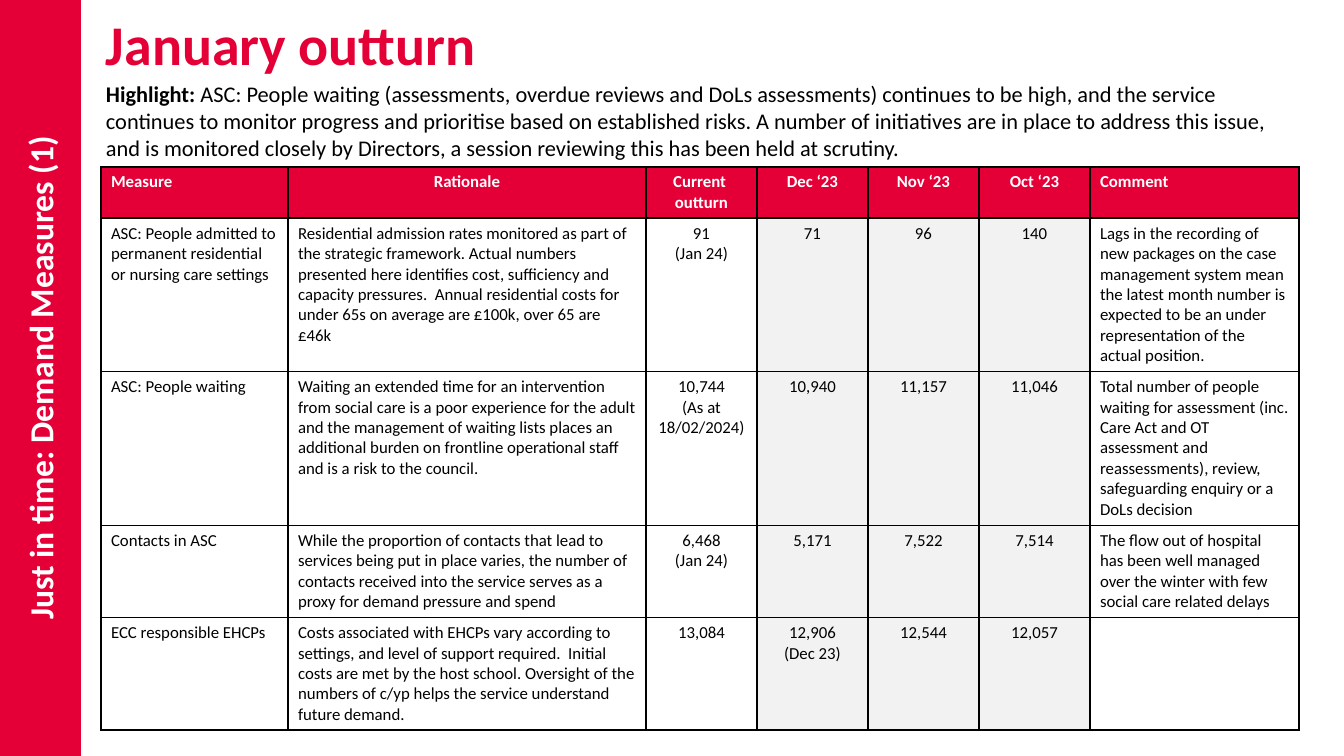
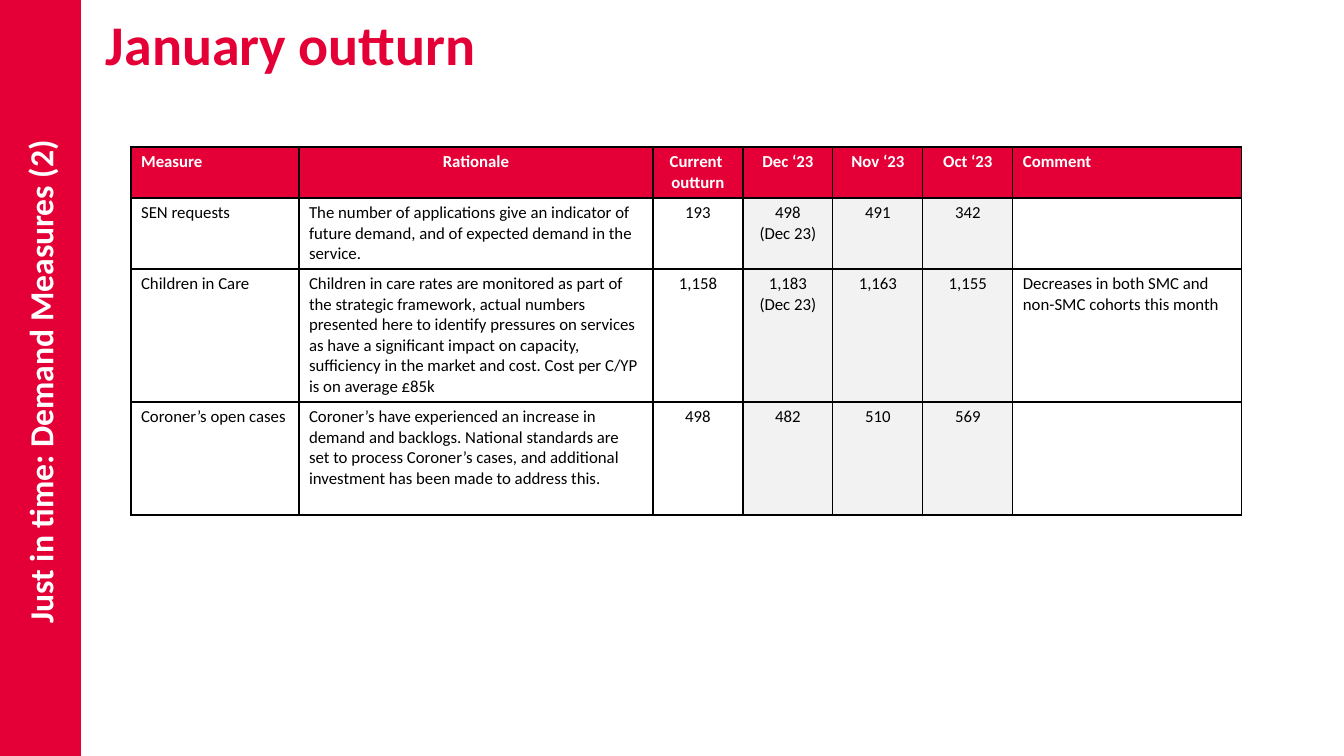
import lxml.etree
import pptx
import pptx.dml.color
import pptx.enum.shapes
import pptx.enum.text
import pptx.oxml.ns
import pptx.util

EMU_PER_PX = 914400 / 100.8
SLIDE_WIDTH, SLIDE_HEIGHT = 1344, 756

RED = pptx.dml.color.RGBColor(0xE4, 0x00, 0x37)
WHITE = pptx.dml.color.RGBColor(0xFF, 0xFF, 0xFF)
BLACK = pptx.dml.color.RGBColor(0x00, 0x00, 0x00)
PALE_GREY = pptx.dml.color.RGBColor(0xF2, 0xF2, 0xF2)

LEFT = pptx.enum.text.PP_ALIGN.LEFT
CENTER = pptx.enum.text.PP_ALIGN.CENTER
MIDDLE = pptx.enum.text.MSO_ANCHOR.MIDDLE

TITLE_FORMAT = {"size": 40, "bold": True, "color": RED}
BAND_FORMAT = {"size": 24, "bold": True, "color": WHITE}
LEAD_FORMAT = {"size": 16, "bold": True, "color": BLACK}
BODY_FORMAT = {"size": 16, "bold": False, "color": BLACK}
HEADER_FORMAT = {"size": 12, "bold": True, "color": WHITE}
CELL_FORMAT = {"size": 12, "bold": False, "color": BLACK}

TITLE = "January outturn"
TITLE_BOX = (106, 10, 403, 83)
BAND_BOX = (-1, 0, 82, SLIDE_HEIGHT)
HIGHLIGHT_BOX = (106, 80, 1199, 121)

HEADERS = ["Measure", "Rationale", "Current \noutturn",
           "Dec ‘23", "Nov ‘23", "Oct ‘23", "Comment"]
CENTERED_COLUMNS = range(2, 6)
SHADED_COLUMNS = range(3, 6)

SLIDES = [
    {
        "band": "Just in time: Demand Measures (1)",
        "highlight": (
            "Highlight:",
            " ASC: People waiting (assessments, overdue reviews and DoLs assessments) "
            "continues to be high, and the service continues to monitor progress and "
            "prioritise based on established risks. A number of initiatives are in place "
            "to address this issue, and is monitored closely by Directors, a session "
            "reviewing this has been held at scrutiny."),
        "origin": (101, 167),
        "columns": [187, 358, 111, 111, 111, 111, 209],
        "heights": [51, 153, 154, 92, 112],
        "rows": [
            ["ASC: People admitted to permanent residential or nursing care settings",
             "Residential admission rates monitored as part of the strategic framework. "
             "Actual numbers presented here identifies cost, sufficiency and capacity "
             "pressures.  Annual residential costs for under 65s on average are £100k, "
             "over 65 are £46k",
             "91\n(Jan 24)", "71", "96", "140",
             "Lags in the recording of new packages on the case management system mean "
             "the latest month number is expected to be an under representation "
             "of the actual position."],
            ["ASC: People waiting",
             "Waiting an extended time for an intervention from social care is a poor "
             "experience for the adult and the management of waiting lists places an "
             "additional burden on frontline operational staff and is a risk to the "
             "council.",
             "10,744\n(As at 18/02/2024)", "10,940", "11,157", "11,046",
             "Total number of people waiting for assessment (inc. Care Act and OT "
             "assessment and reassessments), review, safeguarding enquiry or a DoLs "
             "decision"],
            ["Contacts in ASC",
             "While the proportion of contacts that lead to services being put in place "
             "varies, the number of contacts received into the service serves as a proxy "
             "for demand pressure and spend",
             "6,468\n(Jan 24)", "5,171", "7,522", "7,514",
             "The flow out of hospital has been well managed over the winter with few "
             "social care related delays"],
            ["ECC responsible EHCPs",
             "Costs associated with EHCPs vary according to settings, and level of support "
             "required.  Initial costs are met by the host school. Oversight of the "
             "numbers of c/yp helps the service understand future demand.",
             "13,084", "12,906\n(Dec 23)", "12,544", "12,057", ""],
        ],
    },
    {
        "band": "Just in time: Demand Measures (2) ",
        "highlight": None,
        "origin": (131, 147),
        "columns": [168, 354, 90, 90, 90, 90, 229],
        "heights": [51, 71, 133, 113],
        "rows": [
            ["SEN requests",
             "The number of applications give an indicator of future demand, and of "
             "expected demand in the service.",
             "193", "498\n(Dec 23)", "491", "342", ""],
            ["Children in Care",
             "Children in care rates are monitored as part of the strategic framework, "
             "actual numbers presented here to identify pressures on services as have "
             "a significant impact on capacity, sufficiency in the market and cost. "
             "Cost per C/YP is on average £85k",
             "1,158", "1,183 (Dec 23)", "1,163", "1,155",
             "Decreases in both SMC and non-SMC cohorts this month"],
            ["Coroner’s open cases",
             "Coroner’s have experienced an increase in demand and backlogs. National "
             "standards are set to process Coroner’s cases, and additional investment has "
             "been made to address this.",
             "498", "482", "510", "569", ""],
        ],
    },
]


def px(length):
    return pptx.util.Emu(round(length * EMU_PER_PX))


def add_run(paragraph, text, text_format):
    run = paragraph.add_run()
    run.text = text
    values = {"name": "Calibri", "size": pptx.util.Pt(text_format["size"]),
              "bold": text_format["bold"]}
    for name, value in values.items():
        setattr(run.font, name, value)
    run.font.color.rgb = text_format["color"]


def clear_margins(text_frame):
    text_frame.word_wrap = True
    for side in ("left", "top", "right", "bottom"):
        setattr(text_frame, "margin_" + side, 0)


def add_text_box(slide, box, runs, space_after=0):
    shape = slide.shapes.add_textbox(*map(px, box))
    clear_margins(shape.text_frame)
    paragraph = shape.text_frame.paragraphs[0]
    paragraph.space_after = pptx.util.Pt(space_after)
    for text, text_format in runs:
        add_run(paragraph, text, text_format)


def add_band(slide, box, text):
    # A wide bar turned a quarter about the centre of the upright box
    left, top, width, height = box
    turned = (left + (width - height) / 2, top + (height - width) / 2, height, width)
    shape = slide.shapes.add_shape(
        pptx.enum.shapes.MSO_SHAPE.RECTANGLE, *map(px, turned))
    shape.rotation = 270
    shape.shadow.inherit = False
    shape.fill.solid()
    shape.fill.fore_color.rgb = RED
    shape.line.fill.background()
    clear_margins(shape.text_frame)
    shape.text_frame.vertical_anchor = MIDDLE
    paragraph = shape.text_frame.paragraphs[0]
    paragraph.alignment = CENTER
    add_run(paragraph, text, BAND_FORMAT)


def add_cell_borders(cell):
    properties = cell._tc.get_or_add_tcPr()
    qn = pptx.oxml.ns.qn
    for side in ("a:lnL", "a:lnR", "a:lnT", "a:lnB"):
        line = lxml.etree.SubElement(properties, qn(side), w=str(pptx.util.Pt(1)))
        fill = lxml.etree.SubElement(line, qn("a:solidFill"))
        lxml.etree.SubElement(fill, qn("a:srgbClr"), val=str(BLACK))


def fill_cell(cell, text, text_format, alignment, color):
    add_cell_borders(cell)
    if color is None:
        cell.fill.background()
    else:
        cell.fill.solid()
        cell.fill.fore_color.rgb = color
    if not text:
        return
    for index, line in enumerate(text.split("\n")):
        text_frame = cell.text_frame
        paragraph = text_frame.add_paragraph() if index else text_frame.paragraphs[0]
        paragraph.alignment = alignment
        add_run(paragraph, line, text_format)


def add_measures_table(slide, origin, columns, heights, rows):
    box = (*origin, sum(columns), sum(heights))
    table = slide.shapes.add_table(len(heights), len(columns), *map(px, box)).table
    table.first_row = table.horz_banding = False
    for column, width in zip(table.columns, columns):
        column.width = px(width)
    for row, height in zip(table.rows, heights):
        row.height = px(height)

    # Header row, then one row for each measure
    for row_index, texts in enumerate([HEADERS] + rows):
        is_header = row_index == 0
        for column_index, text in enumerate(texts):
            centered = column_index in CENTERED_COLUMNS or (is_header and column_index == 1)
            shade = PALE_GREY if column_index in SHADED_COLUMNS else None
            fill_cell(table.cell(row_index, column_index), text,
                      HEADER_FORMAT if is_header else CELL_FORMAT,
                      CENTER if centered else LEFT,
                      RED if is_header else shade)


def add_measures_slide(presentation, content):
    slide = presentation.slides.add_slide(presentation.slide_layouts[6])
    add_measures_table(slide, content["origin"], content["columns"],
                       content["heights"], content["rows"])
    add_text_box(slide, TITLE_BOX, [(TITLE, TITLE_FORMAT)])
    add_band(slide, BAND_BOX, content["band"])
    if content["highlight"]:
        runs = zip(content["highlight"], (LEAD_FORMAT, BODY_FORMAT))
        add_text_box(slide, HIGHLIGHT_BOX, runs, space_after=11.3)


def main():
    presentation = pptx.Presentation()
    presentation.slide_width = px(SLIDE_WIDTH)
    presentation.slide_height = px(SLIDE_HEIGHT)
    for content in SLIDES:
        add_measures_slide(presentation, content)
    presentation.save("out.pptx")


if __name__ == "__main__":
    main()
